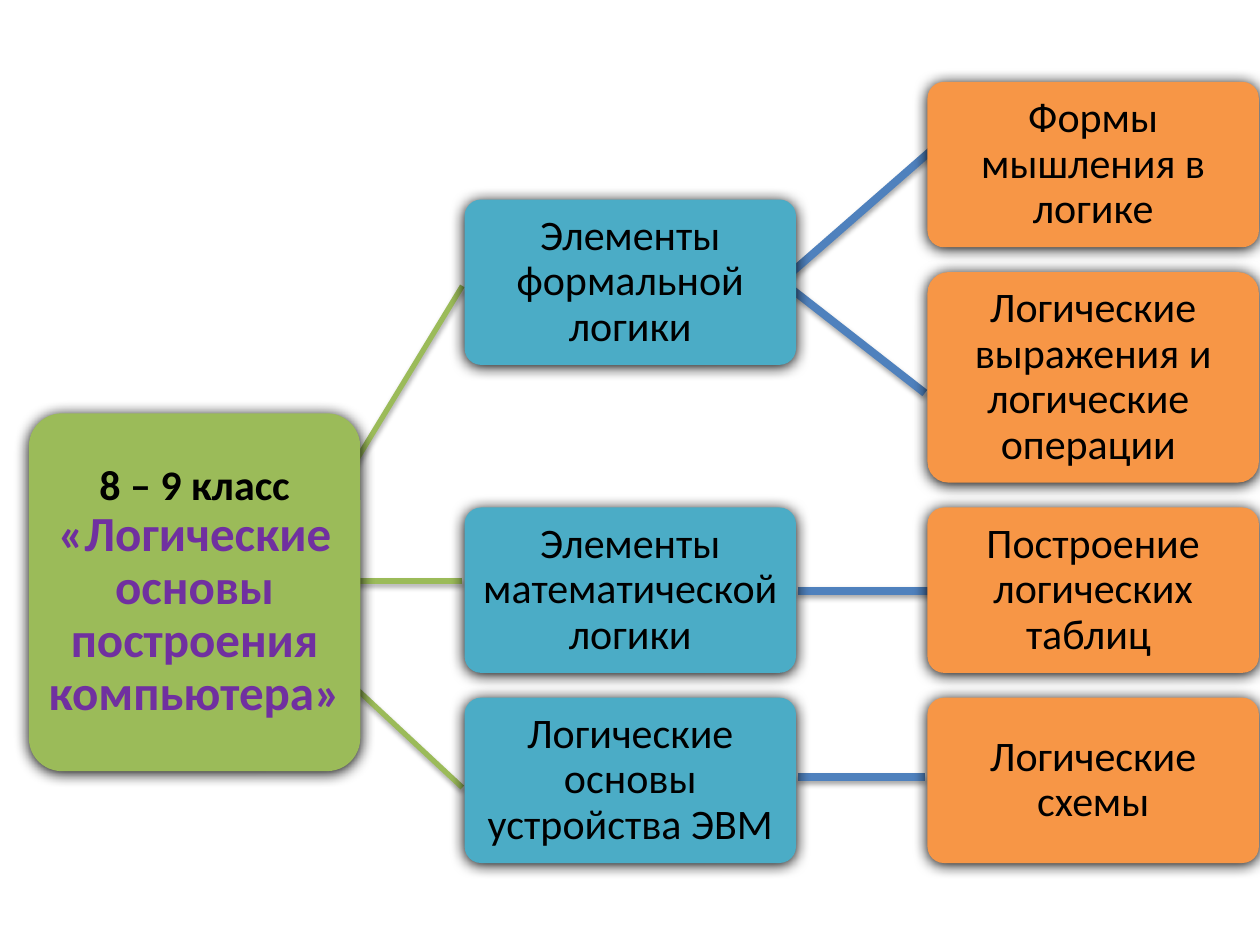
from dataclasses import dataclass

from lxml import etree
from pptx import Presentation
from pptx.dml.color import RGBColor
from pptx.enum.shapes import MSO_CONNECTOR as CONN, MSO_SHAPE as SHAPE
from pptx.enum.text import MSO_ANCHOR as ANCHOR, PP_ALIGN as ALIGN
from pptx.oxml.ns import qn
from pptx.util import Pt

GREEN, TEAL, ORANGE, BLUE = "9BBB59", "4BACC6", "F79646", "4F81BD"
BLACK, PURPLE = "000000", "7030A0"
FONT = "Calibri"

# Grid of the tree
BOX_W, BOX_H, TALL_H, GAP = 189.4, 94.5, 120.3, 14.2
ROOT_X, TOPIC_X, LEAF_X = 16.5, 265.5, 530
ROOT_Y, ROOT_H = 236.2, 204.5
ROW_1 = 46.8
ROW_2 = ROW_1 + BOX_H + GAP
ROW_3 = ROW_2 + TALL_H + GAP
ROW_4 = ROW_3 + BOX_H + GAP
TOPIC_1 = (ROW_1 + ROW_2 + TALL_H - BOX_H) / 2  # centred on its two leaves


@dataclass
class Run:
    text: str
    size: float = 24
    color: str = BLACK
    bold: bool = False


@dataclass
class Box:
    x: float
    y: float
    h: float
    fill: str
    runs: list[Run]


@dataclass
class Link:
    x1: float
    y1: float
    x2: float
    y2: float
    color: str
    width: float


def rgb(color: str) -> RGBColor:
    return RGBColor.from_string(color)


def add_shadow(shape, alpha: int, blur: float, dist: float) -> None:
    """Give the shape a black shadow that falls straight down."""
    effects = etree.SubElement(shape._element.spPr, qn("a:effectLst"))
    shadow = etree.SubElement(
        effects, qn("a:outerShdw"), blurRad=str(Pt(blur)), dist=str(Pt(dist)),
        dir="5400000", rotWithShape="0")
    color = etree.SubElement(shadow, qn("a:srgbClr"), val=BLACK)
    etree.SubElement(color, qn("a:alpha"), val=str(alpha * 1000))


def draw_link(s, link: Link) -> None:
    line = s.shapes.add_connector(
        CONN.STRAIGHT, Pt(link.x1), Pt(link.y1), Pt(link.x2), Pt(link.y2))
    line.line.color.rgb = rgb(link.color)
    line.line.width = Pt(link.width)
    add_shadow(line, 35, 3.1, 1.8)


def draw_box(s, box: Box) -> None:
    sp = s.shapes.add_shape(
        SHAPE.ROUNDED_RECTANGLE, Pt(box.x), Pt(box.y), Pt(BOX_W), Pt(box.h))
    sp.adjustments[0] = 0.1
    sp.fill.solid()
    sp.fill.fore_color.rgb = rgb(box.fill)
    sp.line.fill.background()
    add_shadow(sp, 100, 8.5, 1)

    tf = sp.text_frame
    tf.word_wrap = True
    tf.vertical_anchor = ANCHOR.MIDDLE
    tf.margin_left = tf.margin_right = tf.margin_top = tf.margin_bottom = Pt(1.4)
    p = tf.paragraphs[0]
    p.alignment = ALIGN.CENTER
    p.line_spacing = 0.9
    for run in box.runs:
        r = p.add_run()
        r.text = run.text
        r.font.name = FONT
        r.font.size = Pt(run.size)
        r.font.bold = run.bold
        r.font.color.rgb = rgb(run.color)


LINKS = [
    # Root to topics
    Link(191.5, 332, 264.2, 332, GREEN, 3),
    Link(185.8, 292.3, 264.2, 163.4, GREEN, 3),
    Link(191.5, 382.3, 264.2, 450, GREEN, 3),
    # Topics to leaves
    Link(450, 157.7, 534.2, 84.2, BLUE, 4.5),
    Link(450, 163.4, 528.5, 224.6, BLUE, 4.5),
    Link(455.8, 337.7, 534.2, 337.7, BLUE, 4.5),
    Link(455.8, 444.2, 528.5, 444.2, BLUE, 4.5),
]

BOXES = [
    # Root
    Box(ROOT_X, ROOT_Y, ROOT_H, GREEN, [
        Run("8 – 9 класс ", bold=True),
        Run("«Логические основы построения компьютера»", 28, PURPLE, True)]),
    # Topics
    Box(TOPIC_X, TOPIC_1, BOX_H, TEAL, [Run("Элементы формальной логики")]),
    Box(TOPIC_X, ROW_3, BOX_H, TEAL, [Run("Элементы математической логики")]),
    Box(TOPIC_X, ROW_4, BOX_H, TEAL, [Run("Логические основы устройства ЭВМ")]),
    # Leaves
    Box(LEAF_X, ROW_1, BOX_H, ORANGE, [Run("Формы мышления в логике")]),
    Box(LEAF_X, ROW_2, TALL_H, ORANGE,
        [Run("Логические выражения и логические  операции ")]),
    Box(LEAF_X, ROW_3, BOX_H, ORANGE, [Run("Построение логических таблиц ")]),
    Box(LEAF_X, ROW_4, BOX_H, ORANGE, [Run("Логические схемы")]),
]


def main() -> None:
    prs = Presentation()
    prs.slide_width, prs.slide_height = Pt(720), Pt(540)
    s = prs.slides.add_slide(prs.slide_layouts[6])
    for link in LINKS:
        draw_link(s, link)
    for box in BOXES:
        draw_box(s, box)
    prs.save("out.pptx")


if __name__ == "__main__":
    main()
